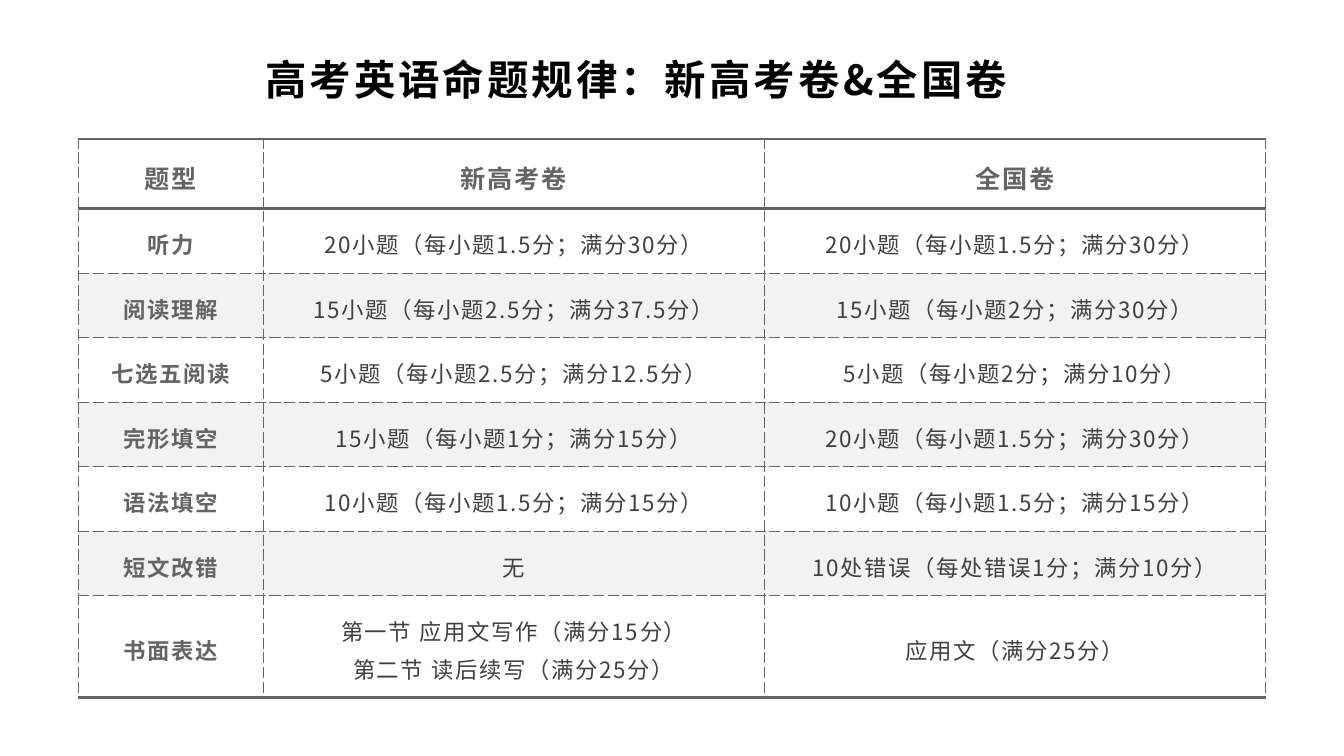
from lxml.etree import SubElement
from pptx import Presentation
from pptx.dml.color import RGBColor
from pptx.enum.text import MSO_ANCHOR, PP_ALIGN
from pptx.oxml.ns import qn
from pptx.util import Inches, Pt

SLIDE_WIDTH, SLIDE_HEIGHT = Inches(13.33), Inches(7.5)
TYPEFACE = "Noto Sans CJK SC"
BLACK, GREY, DARK, WHITE, BAND = "000000", "646464", "404040", "FFFFFF", "F2F2F2"
COLUMN_WIDTHS = [1.83, 4.97, 4.97]
ROW_HEIGHTS = [0.69] + [0.64] * 6 + [1.01]
HEADING = "高考英语命题规律：新高考卷&全国卷"
QUESTION_TYPES = [
    ("题型", "新高考卷", "全国卷"),
    ("听力", "20小题（每小题1.5分；满分30分）", "20小题（每小题1.5分；满分30分）"),
    ("阅读理解", "15小题（每小题2.5分；满分37.5分）", "15小题（每小题2分；满分30分）"),
    ("七选五阅读", "5小题（每小题2.5分；满分12.5分）", "5小题（每小题2分；满分10分）"),
    ("完形填空", "15小题（每小题1分；满分15分）", "20小题（每小题1.5分；满分30分）"),
    ("语法填空", "10小题（每小题1.5分；满分15分）", "10小题（每小题1.5分；满分15分）"),
    ("短文改错", "无", "10处错误（每处错误1分；满分10分）"),
    ("书面表达", "第一节 应用文写作（满分15分）\n第二节 读后续写（满分25分）", "应用文（满分25分）"),
]


def color(hex_code):
    return RGBColor.from_string(hex_code)


def across(share):
    return round(SLIDE_WIDTH * share)


def down(share):
    return round(SLIDE_HEIGHT * share)


def add_run(paragraph, wording, size, hex_code, bold, spacing):
    run = paragraph.add_run()
    run.text = wording
    run.font.size = Pt(size)
    run.font.bold = bold
    run.font.name = TYPEFACE
    run.font.color.rgb = color(hex_code)
    properties = run.font._element
    properties.set("spc", str(round(spacing * 100)))
    SubElement(properties, qn("a:ea"), typeface=TYPEFACE)


def add_heading(slide):
    heading = slide.shapes.add_textbox(across(0.19), down(0.048), across(0.8357), down(0.1133))
    frame = heading.text_frame
    frame.word_wrap = True
    frame.vertical_anchor = MSO_ANCHOR.MIDDLE
    paragraph = frame.paragraphs[0]
    paragraph.space_before = Pt(9.4)
    add_run(paragraph, HEADING, 29.6, BLACK, True, 2.1)


def add_border(cell, side, width, dash):
    border = SubElement(cell._tc.get_or_add_tcPr(), qn(f"a:ln{side}"), w=str(Pt(width)))
    fill = SubElement(border, qn("a:solidFill"))
    SubElement(fill, qn("a:srgbClr"), val=GREY)
    SubElement(border, qn("a:prstDash"), val=dash)


def frame_cell(cell, row, last_row):
    thin, thick = (0.75, "sysDash"), (2.25, "solid")
    add_border(cell, "L", *thin)
    add_border(cell, "R", *thin)
    add_border(cell, "T", *(thick if row in (0, 1) else thin))
    add_border(cell, "B", *(thick if row in (0, last_row) else thin))
    cell.fill.solid()
    cell.fill.fore_color.rgb = color(BAND if row and row % 2 == 0 else WHITE)


def write_cell(cell, wording, is_header, is_label):
    cell.vertical_anchor = MSO_ANCHOR.MIDDLE
    cell.margin_left = cell.margin_right = Inches(0.21)
    cell.margin_top = cell.margin_bottom = Inches(0.12)
    size, spacing = (18, 1.3) if is_header else (16, 1.2)
    for index, line in enumerate(wording.split("\n")):
        frame = cell.text_frame
        paragraph = frame.add_paragraph() if index else frame.paragraphs[0]
        paragraph.alignment = PP_ALIGN.CENTER
        paragraph.line_spacing = 1.2
        add_run(paragraph, line, size, GREY if is_label else DARK, is_label, spacing)


def add_question_table(slide):
    table = slide.shapes.add_table(
        len(ROW_HEIGHTS), len(COLUMN_WIDTHS), across(0.0585), down(0.184),
        Inches(sum(COLUMN_WIDTHS)), Inches(sum(ROW_HEIGHTS))).table
    table.first_row = table.horz_banding = False
    for column, width in zip(table.columns, COLUMN_WIDTHS):
        column.width = Inches(width)
    for row, height in zip(table.rows, ROW_HEIGHTS):
        row.height = Inches(height)
    for row, wordings in enumerate(QUESTION_TYPES):
        for column, wording in enumerate(wordings):
            cell = table.cell(row, column)
            frame_cell(cell, row, len(QUESTION_TYPES) - 1)
            write_cell(cell, wording, row == 0, row == 0 or column == 0)


def main():
    presentation = Presentation()
    presentation.slide_width, presentation.slide_height = SLIDE_WIDTH, SLIDE_HEIGHT
    slide = presentation.slides.add_slide(presentation.slide_layouts[6])
    add_heading(slide)
    add_question_table(slide)
    presentation.save("out.pptx")


if __name__ == "__main__":
    main()
